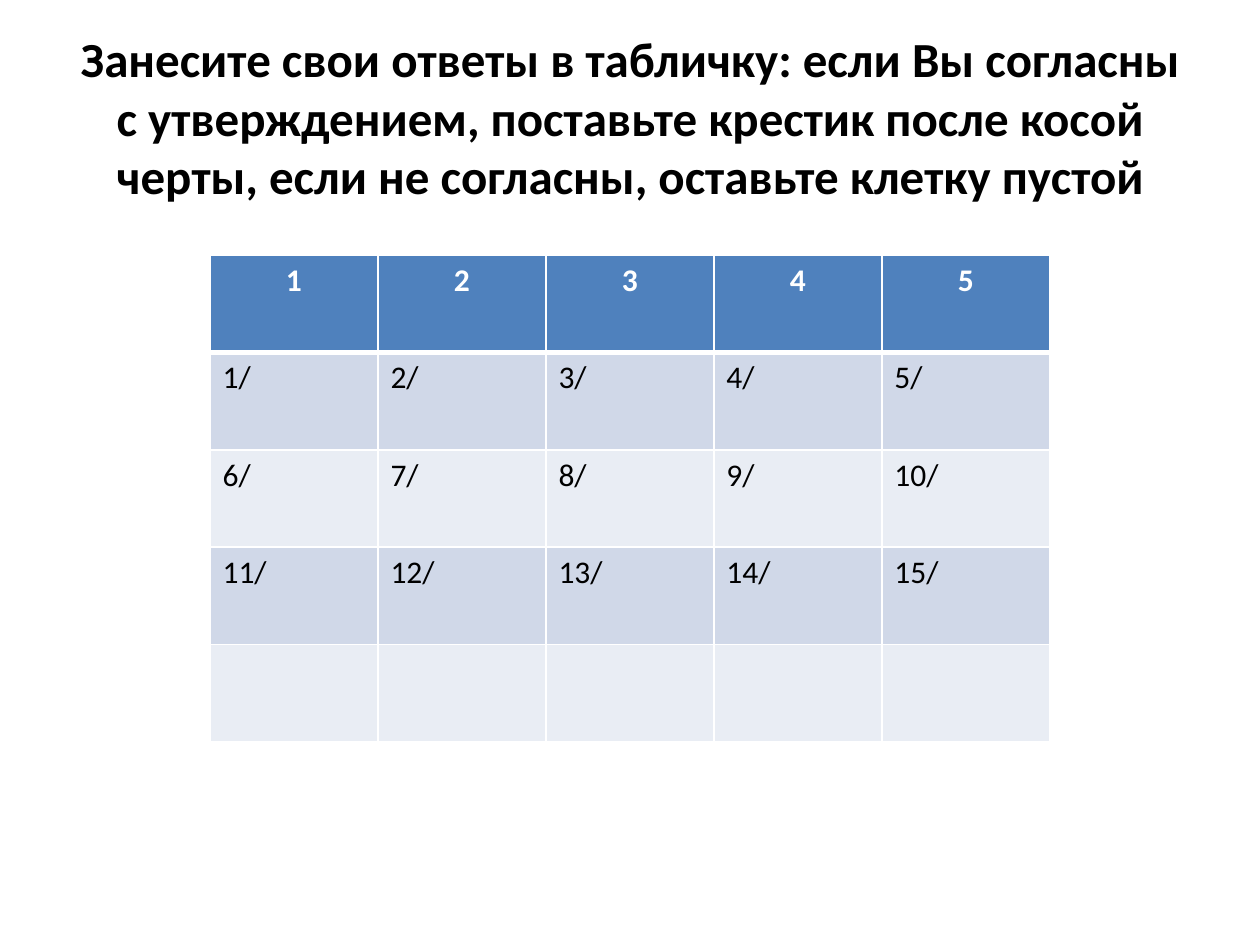
import dataclasses
import lxml.etree
import pptx
import pptx.dml.color
import pptx.enum.text
import pptx.oxml.ns
import pptx.util

ALIGN = pptx.enum.text.PP_ALIGN


@dataclasses.dataclass
class Theme:
    font: str = "Calibri"
    ink: str = "000000"
    white: str = "FFFFFF"
    head: str = "4F81BD"
    bands: tuple = ("D0D8E8", "E9EDF4")
    title: int = 28
    body: int = 18
    thin: int = 1
    thick: int = 3


class Deck:
    def __init__(self, theme):
        self.theme = theme
        self.prs = pptx.Presentation()
        self.prs.slide_width = pptx.util.Inches(10)
        self.prs.slide_height = pptx.util.Inches(7.5)
        self.slide = self.prs.slides.add_slide(self.prs.slide_layouts[5])

    def box(self, left, top, width, height):
        """Turn shares of the slide into lengths."""
        wide, high = self.prs.slide_width, self.prs.slide_height
        return [int(left * wide), int(top * high), int(width * wide), int(height * high)]

    def label(self, frame, text, size, color, bold, align):
        par = frame.paragraphs[0]
        par.alignment = align
        run = par.add_run()
        run.text = text
        run.font.name = self.theme.font
        run.font.size = pptx.util.Pt(size)
        run.font.bold = bold
        run.font.color.rgb = pptx.dml.color.RGBColor.from_string(color)

    def title(self, text, place):
        shape = self.slide.shapes.title
        shape.left, shape.top, shape.width, shape.height = self.box(*place)
        frame = shape.text_frame
        frame.word_wrap = True
        frame.auto_size = pptx.enum.text.MSO_AUTO_SIZE.NONE
        frame.vertical_anchor = pptx.enum.text.MSO_ANCHOR.MIDDLE
        self.label(frame, text, self.theme.title, self.theme.ink, True, ALIGN.CENTER)

    def border(self, cell, **widths):
        props = cell._tc.get_or_add_tcPr()
        name = pptx.oxml.ns.qn
        for spot, (side, width) in enumerate(widths.items()):
            line = lxml.etree.Element(name("a:ln" + side), w=str(pptx.util.Pt(width)))
            fill = lxml.etree.SubElement(line, name("a:solidFill"))
            lxml.etree.SubElement(fill, name("a:srgbClr"), val=self.theme.white)
            props.insert(spot, line)

    def table(self, rows, place):
        look = self.theme
        grid = self.slide.shapes.add_table(len(rows), len(rows[0]), *self.box(*place)).table
        for r, row in enumerate(rows):
            head = r == 0
            shade = look.head if head else look.bands[(r - 1) % 2]
            for c, text in enumerate(row):
                cell = grid.cell(r, c)
                cell.fill.solid()
                cell.fill.fore_color.rgb = pptx.dml.color.RGBColor.from_string(shade)
                self.border(cell, L=look.thin, R=look.thin,
                            T=look.thick if r == 1 else look.thin,
                            B=look.thick if head else look.thin)
                if text:
                    self.label(cell.text_frame, text, look.body,
                               look.white if head else look.ink, head,
                               ALIGN.CENTER if head else ALIGN.LEFT)


def main():
    deck = Deck(Theme())

    # Instruction
    deck.title("Занесите свои ответы в табличку: если Вы согласны с утверждением, "
               "поставьте крестик после косой черты, если не согласны, "
               "оставьте клетку пустой", (0.05, 0.04, 0.9, 1 / 6))

    # Answer grid: numbered head, three rows of answers, one blank row
    cols = 5
    heads = [str(n + 1) for n in range(cols)]
    marks = [[f"{r * cols + c + 1}/" for c in range(cols)] for r in range(3)]
    deck.table([heads, *marks, [""] * cols], (1 / 6, 0.27, 2 / 3, 0.515))

    deck.prs.save("out.pptx")


if __name__ == "__main__":
    main()
